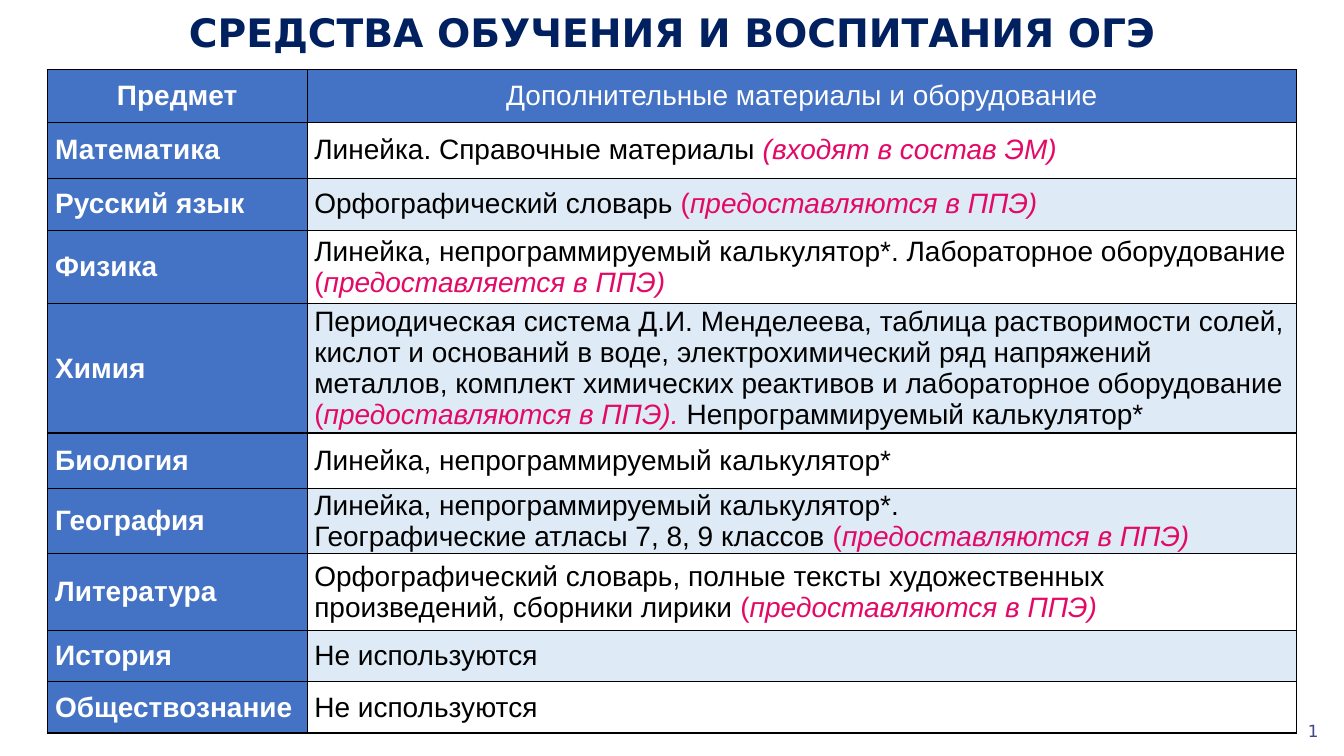
from lxml import etree
from pptx import Presentation
from pptx.dml.color import RGBColor
from pptx.enum.text import MSO_ANCHOR, MSO_AUTO_SIZE, PP_ALIGN
from pptx.oxml.ns import qn
from pptx.util import Cm, Pt

LEFT, CENTER, RIGHT = PP_ALIGN.LEFT, PP_ALIGN.CENTER, PP_ALIGN.RIGHT
TOP, MIDDLE = MSO_ANCHOR.TOP, MSO_ANCHOR.MIDDLE
NO_AUTOFIT = MSO_AUTO_SIZE.NONE

HEADER = ("Предмет", "Дополнительные материалы и оборудование")
CALCULATOR = "Линейка, непрограммируемый калькулятор*"
PROVIDED = "предоставляются в ППЭ)"
NOT_USED = [("Не используются", "plain")]


def provided(materials, note=PROVIDED):
    return [(materials, "plain"), ("(", "accent"), (note, "note")]


# Subject, row height in cm, runs of the materials column
SUBJECTS = [
    ("Математика", 1.41, [("Линейка. Справочные материалы ", "plain"),
                          ("(входят в состав ЭМ)", "note")]),
    ("Русский язык", 1.31, provided("Орфографический словарь ")),
    ("Физика", 1.85, provided(CALCULATOR + ". Лабораторное оборудование ",
                              "предоставляется в ППЭ)")),
    ("Химия", 3.26, provided(
        "Периодическая система Д.И. Менделеева, таблица растворимости солей, "
        "кислот и оснований в воде, электрохимический ряд напряжений металлов, "
        "комплект химических реактивов и лабораторное оборудование ",
        PROVIDED + ".") + [(" Непрограммируемый калькулятор*", "plain")]),
    ("Биология", 1.4, [(CALCULATOR, "plain")]),
    ("География", 1.64, provided(
        CALCULATOR + ".\nГеографические атласы 7, 8, 9 классов ")),
    ("Литература", 1.94, provided(
        "Орфографический словарь, полные тексты художественных "
        "произведений, сборники лирики ")),
    ("История", 1.29, NOT_USED),
    ("Обществознание", 1.29, NOT_USED),
]


def color(value):
    return RGBColor.from_string(value)


class SlideBuilder:
    title_font, table_font = "DejaVu Sans", "Arial"
    navy, blue, pale, white = "002060", "4472C4", "DEEBF7", "FFFFFF"
    black, pink, number_color = "000000", "E30967", "404888"

    def __init__(self, presentation):
        self.slide = presentation.slides.add_slide(presentation.slide_layouts[5])

    def format(self, paragraph, font, size, hex_color, bold=False, align=LEFT):
        paragraph.alignment = align
        paragraph.font.name = font
        paragraph.font.size = Pt(size)
        paragraph.font.bold = bold
        paragraph.font.color.rgb = color(hex_color)

    def fill_frame(self, shape, text, anchor, **style):
        frame = shape.text_frame
        frame.word_wrap = True
        frame.auto_size = NO_AUTOFIT
        frame.vertical_anchor = anchor
        frame.text = text
        self.format(frame.paragraphs[0], self.title_font, **style)

    def title(self, text, left, top, width, height):
        shape = self.slide.shapes.title
        shape.left, shape.top = Cm(left), Cm(top)
        shape.width, shape.height = Cm(width), Cm(height)
        self.fill_frame(shape, text, TOP, size=28, hex_color=self.navy,
                        bold=True, align=CENTER)

    def page_number(self, text, left, top, width, height):
        shape = self.slide.shapes.add_textbox(Cm(left), Cm(top), Cm(width), Cm(height))
        self.fill_frame(shape, text, MIDDLE, size=12,
                        hex_color=self.number_color, align=RIGHT)

    def border(self, cell):
        properties = cell._tc.get_or_add_tcPr()
        for side in ("a:lnL", "a:lnR", "a:lnT", "a:lnB"):
            line = etree.SubElement(properties, qn(side), w=str(Pt(1)))
            solid = etree.SubElement(line, qn("a:solidFill"))
            etree.SubElement(solid, qn("a:srgbClr"), val=self.black)

    def cell(self, cell, fill, hex_color, bold=False, align=LEFT, margin=None):
        self.border(cell)
        cell.fill.solid()
        cell.fill.fore_color.rgb = color(fill)
        cell.vertical_anchor = MIDDLE
        if margin is not None:
            cell.margin_left = cell.margin_right = Cm(margin)
            cell.margin_top = cell.margin_bottom = 0
        paragraph = cell.text_frame.paragraphs[0]
        self.format(paragraph, self.table_font, 20, hex_color, bold, align)
        return paragraph

    def add_runs(self, paragraph, runs):
        for text, kind in runs:
            for index, line in enumerate(text.split("\n")):
                if index:
                    paragraph.add_line_break()
                run = paragraph.add_run()
                run.text = line
                if kind != "plain":
                    run.font.color.rgb = color(self.pink)
                    run.font.italic = kind == "note"

    def table(self, header, header_height, subjects, left, top, widths):
        heights = [header_height] + [height for _, height, _ in subjects]
        table = self.slide.shapes.add_table(
            len(heights), len(widths), Cm(left), Cm(top),
            Cm(sum(widths)), Cm(sum(heights))).table
        for column, width in zip(table.columns, widths):
            column.width = Cm(width)
        for row, height in zip(table.rows, heights):
            row.height = Cm(height)

        # Header row
        for column, text in enumerate(header):
            paragraph = self.cell(table.cell(0, column), self.blue, self.white,
                                  bold=column == 0, align=CENTER)
            paragraph.add_run().text = text

        # Subject rows with alternating fills
        for row, (subject, _, runs) in enumerate(subjects, 1):
            paragraph = self.cell(table.cell(row, 0), self.blue, self.white,
                                  bold=True, margin=0.2)
            paragraph.add_run().text = subject
            fill = self.white if row % 2 else self.pale
            paragraph = self.cell(table.cell(row, 1), fill, self.black, margin=0.18)
            paragraph.space_after = Pt(6)
            self.add_runs(paragraph, runs)


def main():
    presentation = Presentation()
    presentation.slide_width, presentation.slide_height = Cm(33.87), Cm(19.05)
    builder = SlideBuilder(presentation)
    builder.table(HEADER, 1.32, SUBJECTS, left=1.19, top=1.76, widths=(6.55, 24.94))
    builder.page_number("1", 25.86, 17.91, 7.62, 1.02)
    builder.title("СРЕДСТВА ОБУЧЕНИЯ И ВОСПИТАНИЯ ОГЭ", 0, 0.08, 33.87, 1.45)
    presentation.save("out.pptx")


if __name__ == "__main__":
    main()
